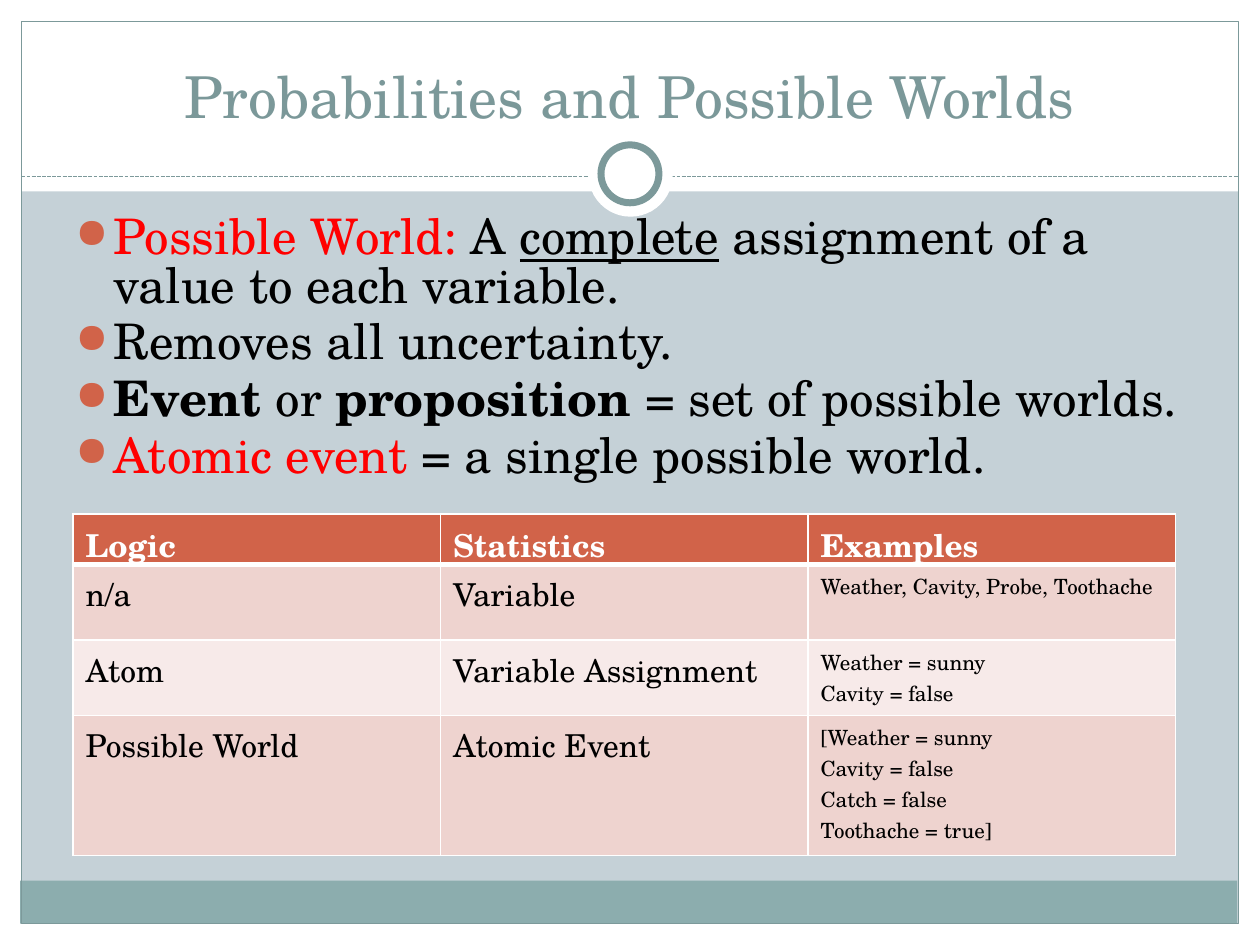
import copy

import pptx
import pptx.dml.color
import pptx.enum.dml
import pptx.enum.shapes
import pptx.enum.text
import pptx.oxml
import pptx.oxml.ns
import pptx.util
from pptx.util import Inches

FONT = "TeX Gyre Schola"
WHITE, BLACK, RED = "FFFFFF", "000000", "FF0000"
TEAL, ORANGE = "7C999A", "D16349"
DARK_ROW, LIGHT_ROW = "EED3CF", "F7EAE9"
SHAPE = pptx.enum.shapes.MSO_SHAPE


def rgb(value):
    return pptx.dml.color.RGBColor.from_string(value)


def make_xml(tag, content="", attributes=""):
    namespace = pptx.oxml.ns.nsdecls("a")
    return pptx.oxml.parse_xml(f"<a:{tag} {namespace} {attributes}>{content}</a:{tag}>")


def add_text(paragraph, text, size=18, color=BLACK, bold=False, underline=False):
    for index, line in enumerate(text.split("\n")):
        if index:
            paragraph.add_line_break()
            line_break = paragraph._p[-1]
            line_break.append(copy.deepcopy(run._r.rPr))
        run = paragraph.add_run()
        run.text = line
        run.font.name = FONT
        run.font.size = pptx.util.Pt(size)
        run.font.color.rgb = rgb(color)
        run.font.bold = bold
        run.font.underline = underline


def add_panel(slide, left, top, width, height, fill=None, line=None, weight=0.75,
              kind=SHAPE.RECTANGLE):
    panel = slide.shapes.add_shape(
        kind, Inches(left), Inches(top), Inches(width), Inches(height))
    panel.shadow.inherit = False
    if fill:
        panel.fill.solid()
        panel.fill.fore_color.rgb = rgb(fill)
    else:
        panel.fill.background()
    if line:
        panel.line.color.rgb = rgb(line)
        panel.line.width = pptx.util.Pt(weight)
    else:
        panel.line.fill.background()


def add_divider(slide, left, right, top):
    divider = slide.shapes.add_connector(
        pptx.enum.shapes.MSO_CONNECTOR.STRAIGHT,
        Inches(left), Inches(top), Inches(right), Inches(top))
    divider.line.color.rgb = rgb(TEAL)
    divider.line.width = pptx.util.Pt(0.75)
    divider.line.dash_style = pptx.enum.dml.MSO_LINE.SQUARE_DOT
    divider.element.spPr.append(make_xml("effectLst"))


def add_frame(slide):
    for edge in [(0, 7.33, 10, 0.17), (0, 0, 10, 1.52),
                 (0, 0, 0.17, 7.5), (9.83, 0, 0.17, 7.5)]:
        add_panel(slide, *edge, fill=WHITE)
    add_panel(slide, 0.16, 6.99, 9.66, 0.34, fill="8CADAE")
    add_panel(slide, 0.17, 0.17, 9.66, 7.16, line=TEAL)
    add_divider(slide, 0.17, 9.83, 1.4)
    add_panel(slide, 4.67, 1.05, 0.67, 0.67, fill=WHITE, kind=SHAPE.OVAL)
    add_panel(slide, 4.77, 1.15, 0.46, 0.46, fill=WHITE, line=TEAL, weight=4,
              kind=SHAPE.OVAL)


def set_title(slide, text):
    title = slide.shapes.title
    slide.shapes.element.append(title.element)
    title.left, title.top = Inches(0.33), Inches(0.25)
    title.width, title.height = Inches(9.33), Inches(0.83)
    title.text_frame.vertical_anchor = pptx.enum.text.MSO_ANCHOR.BOTTOM
    heading = title.text_frame.paragraphs[0]
    heading.alignment = pptx.enum.text.PP_ALIGN.CENTER
    add_text(heading, text, size=33, color="7B9899")


def set_bullet(paragraph):
    properties = paragraph._p.get_or_add_pPr()
    properties.set("marL", str(Inches(0.3)))
    properties.set("indent", str(Inches(-0.3)))
    properties.append(make_xml("buClr", f'<a:srgbClr val="{ORANGE}"/>'))
    properties.append(make_xml("buSzPct", attributes='val="85000"'))
    properties.append(make_xml("buChar", attributes='char="●"'))


def add_definitions(slide, definitions):
    body = slide.shapes.add_textbox(Inches(0.5), Inches(1.67), Inches(9), Inches(3.25))
    frame = body.text_frame
    frame.word_wrap = True
    for index, parts in enumerate(definitions):
        definition = frame.add_paragraph() if index else frame.paragraphs[0]
        definition.line_spacing = pptx.util.Pt(27.5)
        definition.space_before = pptx.util.Pt(5)
        set_bullet(definition)
        for text, style in parts:
            add_text(definition, text, size=28, **style)


def set_borders(cell, **weights):
    properties = cell._tc.get_or_add_tcPr()
    for index, side in enumerate("LRTB"):
        width = pptx.util.Pt(weights.get(side, 1))
        line = f'<a:solidFill><a:srgbClr val="{WHITE}"/></a:solidFill>'
        properties.insert(index, make_xml(f"ln{side}", line, f'w="{width}"'))


def add_comparison(slide, rows, heights):
    table = slide.shapes.add_table(
        len(rows), len(rows[0]), Inches(0.58), Inches(4.08),
        Inches(8.75), Inches(sum(heights))).table
    for row, height in zip(table.rows, heights):
        row.height = Inches(height)
    for row_index, texts in enumerate(rows):
        header = row_index == 0
        fill = ORANGE if header else DARK_ROW if row_index % 2 else LIGHT_ROW
        weights = {"B": 3} if header else {"T": 3} if row_index == 1 else {}
        for column, text in enumerate(texts):
            cell = table.cell(row_index, column)
            cell.fill.solid()
            cell.fill.fore_color.rgb = rgb(fill)
            set_borders(cell, **weights)
            lines = [text] if isinstance(text, str) else text
            for index, line in enumerate(lines):
                frame = cell.text_frame
                entry = frame.add_paragraph() if index else frame.paragraphs[0]
                add_text(entry, line, size=12 if column == 2 and not header else 18,
                         color=WHITE if header else BLACK, bold=header)


def main():
    deck = pptx.Presentation()
    deck.slide_width, deck.slide_height = Inches(10), Inches(7.5)
    slide = deck.slides.add_slide(deck.slide_layouts[5])
    slide.background.fill.solid()
    slide.background.fill.fore_color.rgb = rgb("C5D1D7")
    add_frame(slide)
    set_title(slide, "Probabilities and Possible Worlds")
    add_definitions(slide, [
        [("Possible World: ", {"color": RED}), ("A ", {}),
         ("complete", {"underline": True}),
         (" assignment of a value to each variable.", {})],
        [("Removes all uncertainty.", {})],
        [("Event ", {"bold": True}), ("or", {}), (" proposition ", {"bold": True}),
         ("= set of possible worlds.", {})],
        [("Atomic event", {"color": RED}), (" = a single possible world.", {})],
    ])
    add_comparison(slide, [
        ["Logic", "Statistics", "Examples"],
        ["n/a", "Variable", "Weather, Cavity, Probe, Toothache"],
        ["Atom", "Variable Assignment", "Weather = sunny\nCavity = false"],
        ["Possible World", "Atomic Event",
         ["[Weather = sunny\nCavity = false", "Catch = false", "Toothache = true]"]],
    ], [0.4, 0.6, 0.6, 1.11])
    deck.save("out.pptx")


if __name__ == "__main__":
    main()
